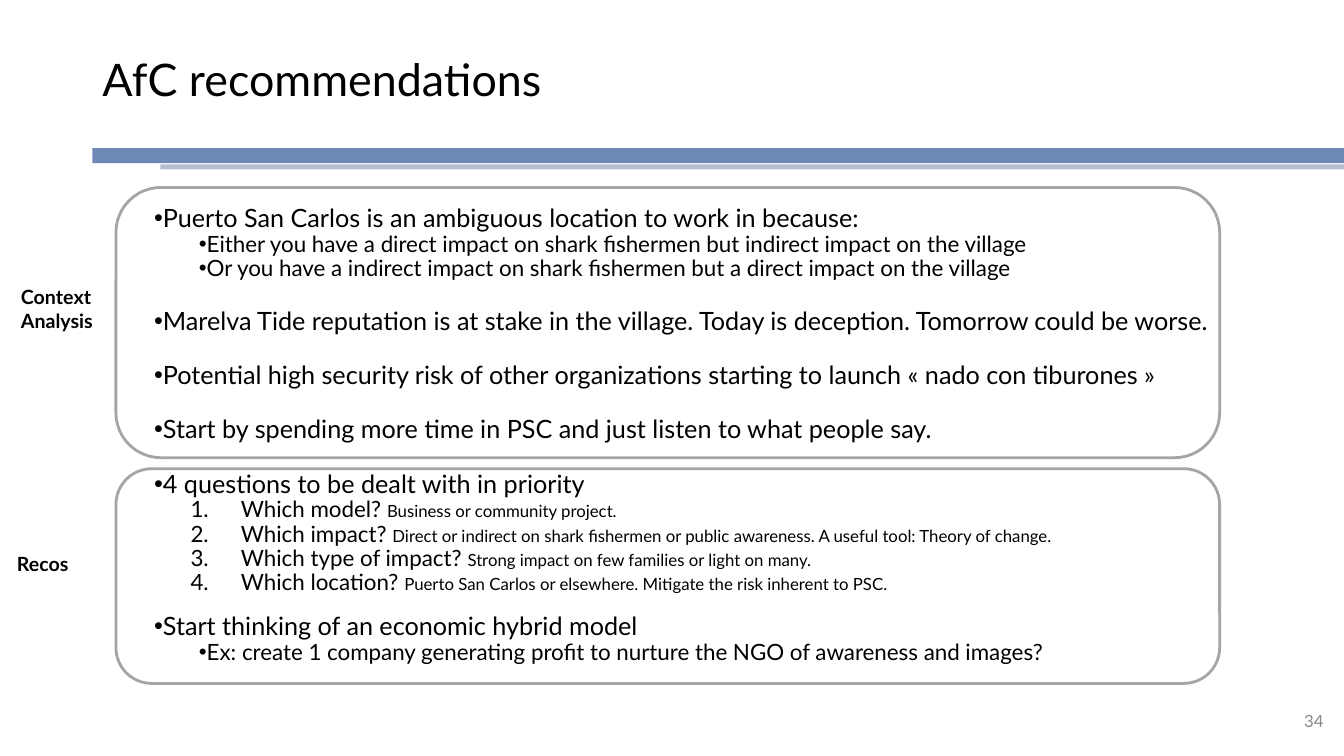
import pptx
import pptx.util
import pptx.dml.color
import pptx.enum.shapes
import pptx.enum.text
import pptx.oxml.ns
from lxml import etree

Pt = pptx.util.Pt
FONT = "Lato"
COLORS = {"text": "000000", "number": "888888", "frame": "A5A5A5",
          "bar": "2F5597", "thin_bar": "002060"}

# Content: (style, gap before in points, text, smaller remark)
TITLE = "AfC recommendations"
PAGE_NUMBER = "34"
BODY = [
    ("main", 0, "Puerto San Carlos is an ambiguous location to work in because:", ""),
    ("sub", 0, "Either you have a direct impact on shark fishermen but indirect impact on the village", ""),
    ("sub", 0, "Or you have a indirect impact on shark fishermen but a direct impact on the village", ""),
    ("main", 19.4, "Marelva Tide reputation is at stake in the village. Today is deception. Tomorrow could be worse.", ""),
    ("main", 19.4, "Potential high security risk of other organizations starting to launch « nado con tiburones »", ""),
    ("main", 19.4, "Start by spending more time in PSC and just listen to what people say.", ""),
    ("main", 19.4, "4 questions to be dealt with in priority", ""),
    ("number", 0, "Which model? ", "Business or community project."),
    ("number", 0, "Which impact? ",
     "Direct or indirect on shark fishermen or public awareness. A useful tool: Theory of change."),
    ("number", 0, "Which type of impact? ", "Strong impact on few families or light on many."),
    ("number", 0, "Which location? ", "Puerto San Carlos or elsewhere. Mitigate the risk inherent to PSC."),
    ("main", 13, "Start thinking of an economic hybrid model", ""),
    ("sub", 0, "Ex: create 1 company generating profit to nurture the NGO of awareness and images?", ""),
]
# Style: level, left margin, first-line indent, size
STYLES = {"main": (0, 18, 10, 18), "sub": (1, 54, 6, 16), "number": (1, 90, -36, 16)}
REMARK_SIZE = 12

# Places: left, top, width, height
TITLE_PLACE = (66, 18.7, 867.6, 79.2)
BODY_PLACE = (75, 139.7, 841.7, 332)
NUMBER_PLACE = (736.6, 500.4, 216, 28.8)
LABELS = [("Context Analysis", (7.9, 200.2, 75, 41)), ("Recos", (5, 391, 75, 24.5))]
FRAMES = [(82.8, 133.9, 788.4, 193), (82.8, 334.8, 788.4, 153.4)]
BARS = [("bar", 69, (66, 105.8, 894, 10.8)), ("thin_bar", 29, (114.5, 117.4, 845.5, 3.6))]


def color(name):
    return pptx.dml.color.RGBColor.from_string(COLORS[name])


def points(place):
    return [Pt(length) for length in place]


def format_run(run, size, name="text", bold=False):
    run.font.name = FONT
    run.font.size = Pt(size)
    run.font.bold = bold
    run.font.color.rgb = color(name)


def add_text_box(slide, place, inset=3.6):
    frame = slide.shapes.add_textbox(*points(place)).text_frame
    frame.word_wrap = True
    frame.margin_left = frame.margin_right = Pt(7.2)
    frame.margin_top = frame.margin_bottom = Pt(inset)
    return frame


def add_plain_shape(slide, kind, place):
    shape = slide.shapes.add_shape(kind, *points(place))
    shape.shadow.inherit = False
    return shape


def add_bullet(paragraph, style):
    level, margin, indent, size = STYLES[style]
    paragraph.level = level
    properties = paragraph._p.get_or_add_pPr()
    properties.set("marL", str(Pt(margin)))
    properties.set("indent", str(Pt(indent)))
    qn = pptx.oxml.ns.qn
    if style == "number":
        etree.SubElement(properties, qn("a:buAutoNum"), type="arabicPeriod")
    else:
        etree.SubElement(properties, qn("a:buFont"), typeface="Arial")
        etree.SubElement(properties, qn("a:buChar"), char="•")


def main():
    presentation = pptx.Presentation()
    presentation.slide_width, presentation.slide_height = Pt(960), Pt(540)
    slide = presentation.slides.add_slide(presentation.slide_layouts[5])
    shapes = pptx.enum.shapes.MSO_SHAPE
    middle = pptx.enum.text.MSO_ANCHOR.MIDDLE

    # Title
    title = slide.shapes.title
    title.left, title.top, title.width, title.height = points(TITLE_PLACE)
    frame = title.text_frame
    frame.text = TITLE
    frame.vertical_anchor = middle
    frame.margin_left = frame.margin_right = frame.margin_top = frame.margin_bottom = Pt(7.2)
    paragraph = frame.paragraphs[0]
    paragraph.alignment = pptx.enum.text.PP_ALIGN.LEFT
    paragraph.line_spacing = 0.9
    format_run(paragraph.runs[0], 32)

    # Translucent bars under the title
    for name, opacity, place in BARS:
        bar = add_plain_shape(slide, shapes.RECTANGLE, place)
        bar.fill.solid()
        bar.fill.fore_color.rgb = color(name)
        bar.line.fill.background()
        tint = bar.fill._xPr.find(".//" + pptx.oxml.ns.qn("a:srgbClr"))
        etree.SubElement(tint, pptx.oxml.ns.qn("a:alpha"), val=str(opacity * 1000))

    # Body list
    frame = add_text_box(slide, BODY_PLACE, 7.2)
    for index, (style, gap, text, remark) in enumerate(BODY):
        paragraph = frame.add_paragraph() if index else frame.paragraphs[0]
        paragraph.line_spacing = 0.9
        if gap:
            paragraph.space_before = Pt(gap)
        add_bullet(paragraph, style)
        paragraph.text = text
        format_run(paragraph.runs[0], STYLES[style][3])
        if remark:
            run = paragraph.add_run()
            run.text = remark
            format_run(run, REMARK_SIZE)

    # Page number
    frame = add_text_box(slide, NUMBER_PLACE)
    frame.vertical_anchor = middle
    frame.text = PAGE_NUMBER
    frame.paragraphs[0].alignment = pptx.enum.text.PP_ALIGN.RIGHT
    format_run(frame.paragraphs[0].runs[0], 12, "number")

    # Rounded frames
    for place in FRAMES:
        outline = add_plain_shape(slide, shapes.ROUNDED_RECTANGLE, place)
        outline.fill.background()
        outline.line.color.rgb = color("frame")
        outline.line.width = Pt(2)

    # Side labels
    for text, place in LABELS:
        frame = add_text_box(slide, place)
        frame.text = text
        format_run(frame.paragraphs[0].runs[0], 14, bold=True)

    presentation.save("out.pptx")


if __name__ == "__main__":
    main()
